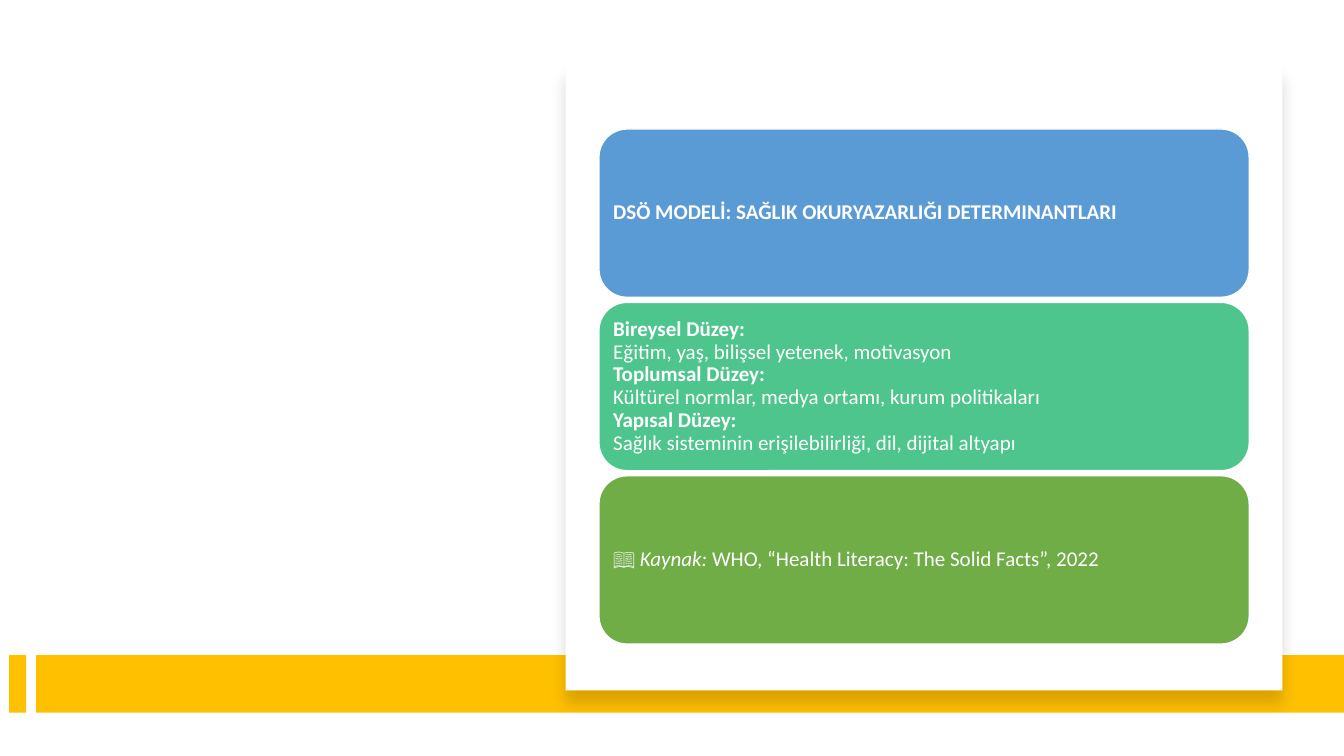
from dataclasses import dataclass

import pptx
import pptx.dml.color
import pptx.enum.shapes
import pptx.enum.text
import pptx.oxml
import pptx.oxml.ns
import pptx.util
from lxml import etree

Inches = pptx.util.Inches
Pt = pptx.util.Pt
Shape = pptx.enum.shapes.MSO_SHAPE


@dataclass(frozen=True)
class Theme:
    white: str = "FFFFFF"
    gold: str = "FFC000"
    blue: str = "5B9BD5"
    teal: str = "4DC58D"
    green: str = "70AD47"
    font: str = "Calibri"
    text_size: int = 15


THEME = Theme()
PLAIN, BOLD, ITALIC = "plain", "bold", "italic"

# Each card is a fill and its lines; each line is a list of (text, style).
CARDS = [
    (THEME.blue, [[("DSÖ MODELİ: SAĞLIK OKURYAZARLIĞI DETERMINANTLARI", BOLD)]]),
    (THEME.teal, [
        [("Bireysel Düzey:", BOLD)],
        [("Eğitim, yaş, bilişsel yetenek, motivasyon", PLAIN)],
        [("Toplumsal Düzey:", BOLD)],
        [("Kültürel normlar, medya ortamı, kurum politikaları", PLAIN)],
        [("Yapısal Düzey:", BOLD)],
        [("Sağlık sisteminin erişilebilirliği, dil, dijital altyapı", PLAIN)],
    ]),
    (THEME.green, [[
        ("📖 ", PLAIN),
        ("Kaynak:", ITALIC),
        (" WHO, “Health Literacy: The Solid Facts”, 2022", PLAIN),
    ]]),
]


def rgb(color):
    return pptx.dml.color.RGBColor.from_string(color)


def add_box(slide, kind, left, top, width, height, fill):
    """Add a flat filled shape without outline; lengths are in inches."""
    shape = slide.shapes.add_shape(
        kind, Inches(left), Inches(top), Inches(width), Inches(height))
    shape.shadow.inherit = False
    shape.fill.solid()
    shape.fill.fore_color.rgb = rgb(fill)
    shape.line.fill.background()
    return shape


def add_soft_shadow(shape):
    effects = shape._element.spPr.find(pptx.oxml.ns.qn("a:effectLst"))
    effects.append(pptx.oxml.parse_xml(
        f'<a:outerShdw {pptx.oxml.ns.nsdecls("a")} blurRad="{Pt(11)}" '
        f'dist="{Pt(10)}" dir="5400000" algn="t" rotWithShape="0">'
        '<a:srgbClr val="000000"><a:alpha val="15000"/></a:srgbClr>'
        '</a:outerShdw>'))


def write_lines(paragraph, lines):
    """Write styled lines into one paragraph, separated by line breaks."""
    for index, line in enumerate(lines):
        if index:
            paragraph.add_line_break()
        for text, style in line:
            run = paragraph.add_run()
            run.text = text
            run.font.name = THEME.font
            run.font.size = Pt(THEME.text_size)
            run.font.color.rgb = rgb(THEME.white)
            run.font.bold = style == BOLD
            run.font.italic = style == ITALIC
    # Breaks need the text size too, or they stretch the line height.
    for line_break in paragraph._p.findall(pptx.oxml.ns.qn("a:br")):
        etree.SubElement(line_break, pptx.oxml.ns.qn("a:rPr"),
                         sz=str(THEME.text_size * 100))


def add_card(slide, left, top, width, height, fill, lines):
    card = add_box(slide, Shape.ROUNDED_RECTANGLE, left, top, width, height, fill)
    card.line.color.rgb = rgb(THEME.white)
    card.line.width = Pt(1)
    frame = card.text_frame
    frame.word_wrap = True
    frame.vertical_anchor = pptx.enum.text.MSO_ANCHOR.MIDDLE
    # The preset insets rounded-corner text by 0.08 in, beyond this margin.
    frame.margin_left = frame.margin_right = Inches(0.06)
    frame.margin_top = frame.margin_bottom = Inches(0.06)
    paragraph = frame.paragraphs[0]
    paragraph.alignment = pptx.enum.text.PP_ALIGN.LEFT
    paragraph.line_spacing = 0.9
    write_lines(paragraph, lines)


def add_footer_band(slide, left, top, width, height):
    stub, gap = 0.17, 0.1
    add_box(slide, Shape.RECTANGLE, left, top, stub, height, THEME.gold)
    add_box(slide, Shape.RECTANGLE, left + stub + gap, top,
            width - stub - gap, height, THEME.gold)


def add_card_panel(slide, left, top, width, height):
    """Add the raised white panel with its stack of cards."""
    panel = add_box(slide, Shape.RECTANGLE, left, top, width, height, THEME.white)
    add_soft_shadow(panel)
    side, head, card_height, pitch = 0.33, 0.64, 1.67, 1.72
    for index, (fill, lines) in enumerate(CARDS):
        add_card(slide, left + side, top + head + index * pitch,
                 width - 2 * side, card_height, fill, lines)


def main():
    presentation = pptx.Presentation()
    presentation.slide_width = Inches(13.33)
    presentation.slide_height = Inches(7.5)
    blank_layout = presentation.slide_layouts[6]
    slide = presentation.slides.add_slide(blank_layout)
    add_footer_band(slide, 0.09, 6.5, 13.24, 0.57)
    add_card_panel(slide, 5.61, 0.64, 7.11, 6.21)
    presentation.save("out.pptx")


if __name__ == "__main__":
    main()
